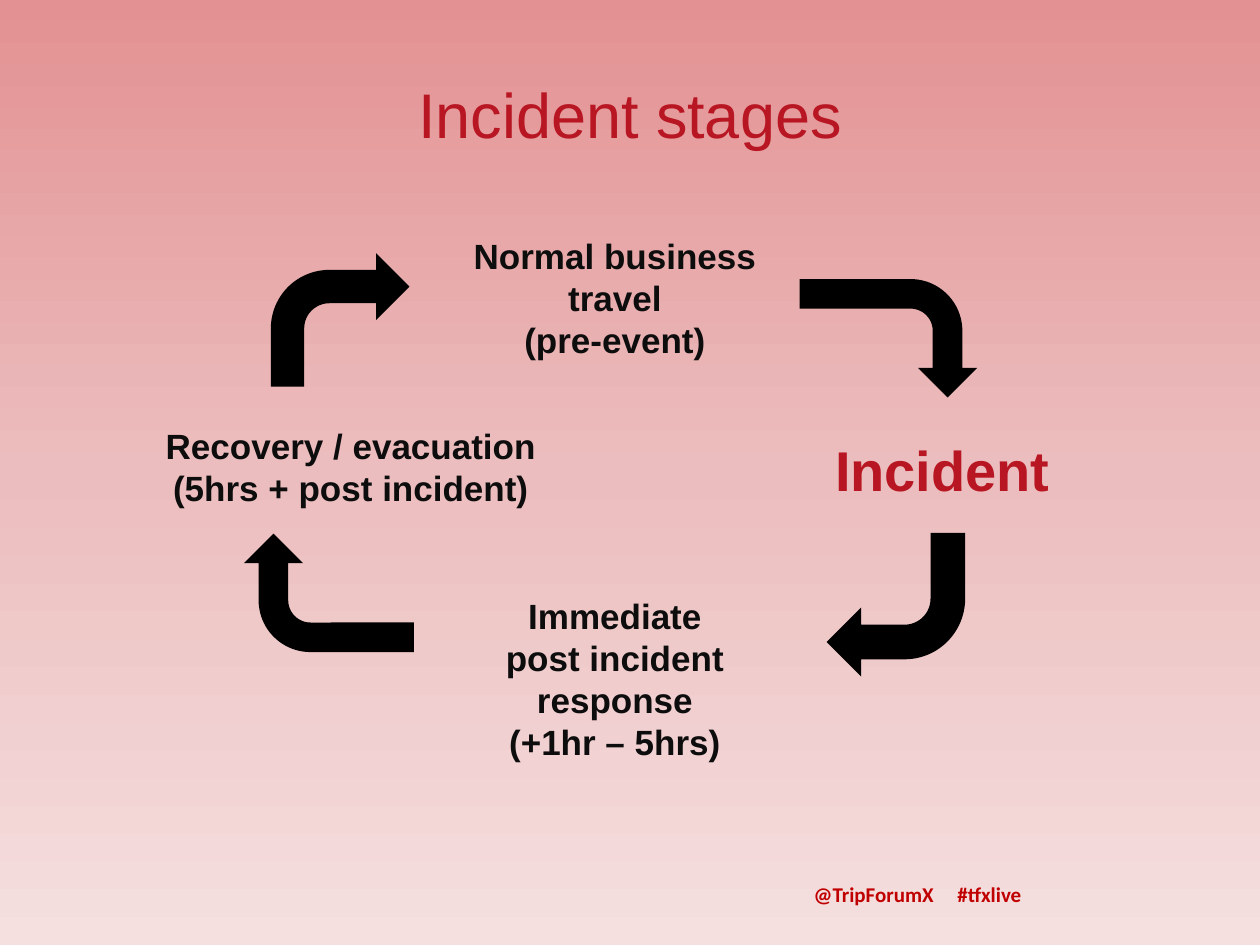
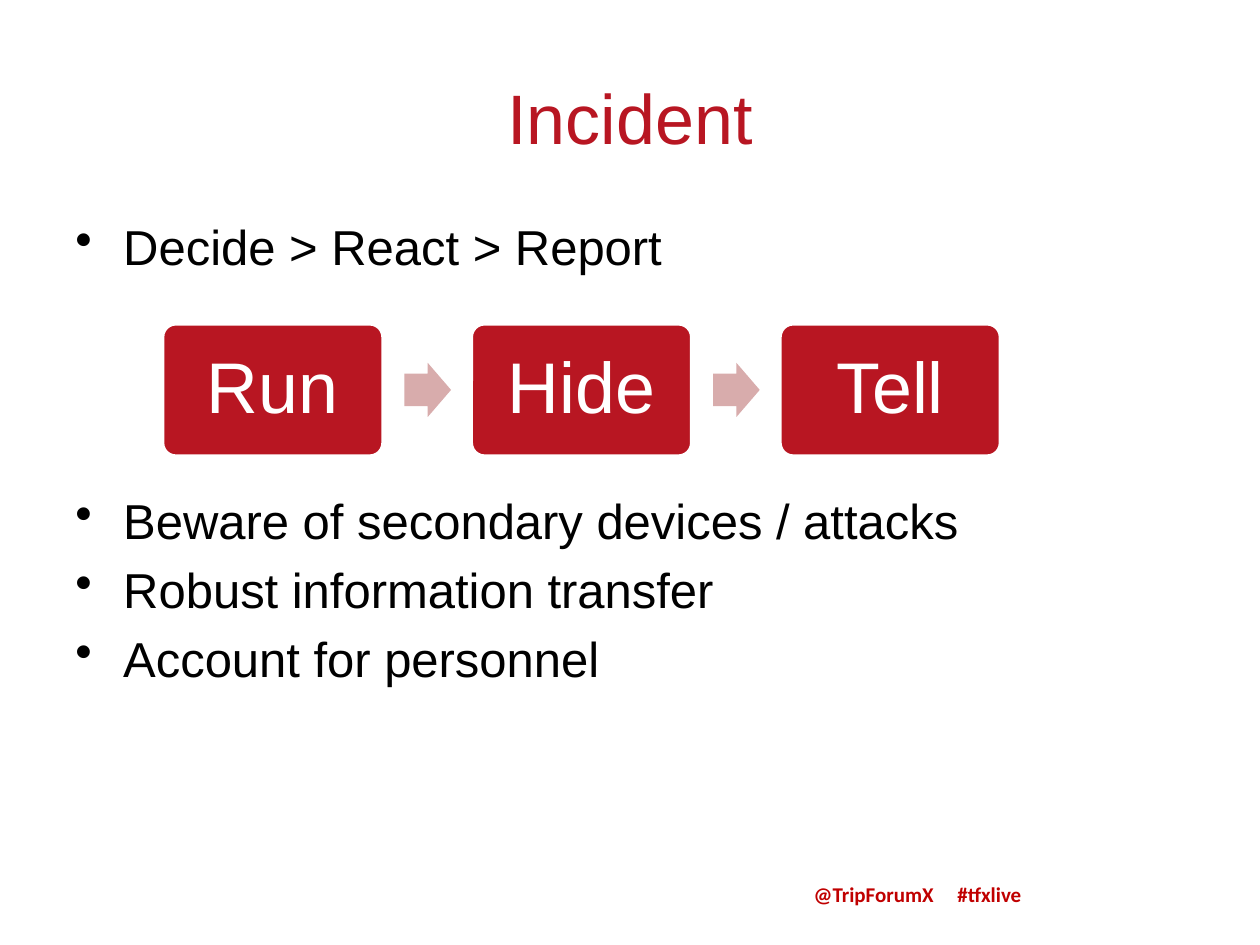
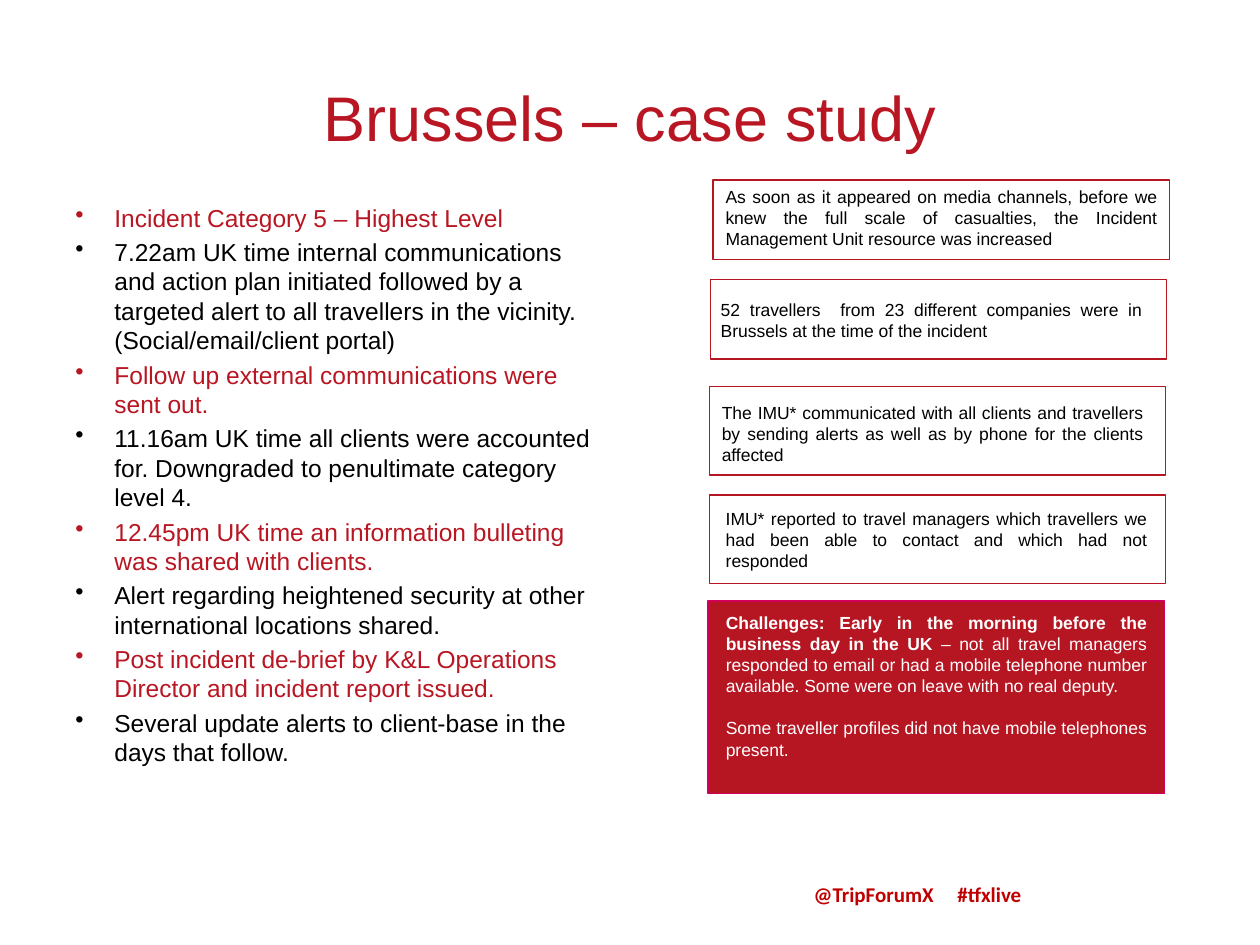
from copy import deepcopy

from lxml.etree import SubElement
from pptx import Presentation
from pptx.dml.color import RGBColor
from pptx.enum.shapes import MSO_SHAPE as Preset
from pptx.enum.text import MSO_ANCHOR as Anchor, PP_ALIGN as Align
from pptx.oxml.ns import qn
from pptx.util import Inches, Pt

RED, CARD_RED, BLACK, WHITE = "B81622", "B51622", "000000", "FFFFFF"
STAGE_TEXT, FOOTER_RED = "0D0D0D", "C00000"
STEP_ARROW, CHALLENGE_LINE = "D8ACAC", "D1005D"

# Shared by all slides
FOOTER = "@TripForumX\t#tfxlive"
FOOTER_TAB = 1.14
TITLE_BOX = (0.5, 0.3, 9, 1.25)

# Incident stages
BACKGROUND_STOPS = [(0, "E39192"), (0.5, "ECBDBE"), (1, "F5DFDF")]
STAGES = [  # box, lines, size, colour
    ((3.64, 1.81, 2.48, 1.11), ["Normal business travel", "(pre-event)"], 20, STAGE_TEXT),
    ((1.12, 3.32, 3.33, 0.77), ["Recovery / evacuation", "(5hrs + post incident)"], 20, STAGE_TEXT),
    ((6.24, 3.41, 2.48, 0.64), ["Incident"], 32, RED),
    ((3.64, 4.67, 2.48, 1.45), ["Immediate", "post incident response", "(+1hr – 5hrs)"], 20, STAGE_TEXT),
]
CYCLE_ARROWS = [  # box, rotation
    ((6.58, 1.98, 0.94, 1.41), 90),
    ((6.56, 4.23, 1.1, 1.14), 180),
    ((2.14, 4.03, 0.94, 1.35), 270),
    ((2.15, 2.01, 1.1, 1.06), 0),
]

# Incident
INCIDENT_POINTS = [
    "Decide > React > Report",
    "Beware of secondary devices / attacks",
    "Robust information transfer",
    "Account for personnel",
]
STEPS = ["Run", "Hide", "Tell"]
STEP_LEFT, STEP_TOP, STEP_PITCH = 1.29, 2.57, 2.45
STEP_WIDTH, STEP_HEIGHT = 1.75, 1.05
ARROW_WIDTH, ARROW_HEIGHT = 0.37, 0.43
STEPS_GAP = 123  # points left free for the steps between two bullets

# Case study
TIMELINE = [
    "Incident Category 5 – Highest Level",
    "7.22am UK time internal communications and action plan initiated followed by a targeted "
    "alert to all travellers in the vicinity. (Social/email/client portal)",
    "Follow up external communications were sent out.",
    "11.16am UK time all clients were accounted for. Downgraded to penultimate category level 4.",
    "12.45pm UK time an information bulleting was shared with clients.",
    "Alert regarding heightened security at other international locations shared.",
    "Post incident de-brief by K&L Operations Director and incident report issued.",
    "Several update alerts to client-base in the days that follow.",
]
CARD_WIDTH = 3.62
CARDS = [  # left, top, height, text inset left and top, text width, text
    (5.66, 1.43, 0.63, 0.1, 0.05, 3.42,
     "As soon as it appeared on media channels, before we knew the full scale of casualties, "
     "the Incident Management Unit resource was increased"),
    (5.64, 2.22, 0.63, 0.08, 0.15, 3.34,
     "52 travellers  from 23 different companies were in Brussels at the time of the incident"),
    (5.63, 3.07, 0.7, 0.1, 0.12, 3.34,
     "The IMU* communicated with all clients and travellers by sending alerts as well as by "
     "phone for the clients affected"),
    (5.63, 3.93, 0.7, 0.13, 0.1, 3.34,
     "IMU* reported to travel managers which travellers we had been able to contact and which "
     "had not responded"),
]
CHALLENGE_CARD = (5.62, 4.77, 1.53, 0.14, 0.09, 3.34)
CHALLENGE_LEAD = "Challenges: Early in the morning before the business day in the UK "
CHALLENGE_TEXT = ("– not all travel managers responded to email or had a mobile telephone number "
                  "available. Some were on leave with no real deputy.")
CHALLENGE_END = "Some traveller profiles did not have mobile telephones present."


def color(value):
    return RGBColor.from_string(value)


def inches(box):
    return [Inches(length) for length in box]


def style(paragraph, size, ink, bold=None, align=None, name="Arial"):
    paragraph.alignment = align
    font = paragraph.font
    font.name, font.size, font.bold = name, Pt(size), bold
    font.color.rgb = color(ink)


def write(frame, lines, *args, **options):
    """Fill a text frame with equally styled paragraphs."""
    frame.word_wrap = True
    frame.text = "\n".join(lines)
    for paragraph in frame.paragraphs:
        style(paragraph, *args, **options)


def add_text(slide, box, lines, *args, anchor=Anchor.TOP, **options):
    frame = slide.shapes.add_textbox(*inches(box)).text_frame
    frame.vertical_anchor = anchor
    write(frame, lines, *args, **options)
    return frame


def add_bullets(slide, box, lines, size, inks, indent):
    frame = add_text(slide, box, lines, size, BLACK)
    for index, paragraph in enumerate(frame.paragraphs):
        properties = paragraph._p.get_or_add_pPr()
        properties.set("marL", str(Inches(indent)))
        properties.set("indent", str(-Inches(indent)))
        bullet = SubElement(properties, qn("a:buChar"))
        bullet.set("char", "•")
        properties.insert(0, bullet)
        if index:
            paragraph.space_before = Pt(size * 0.2)
        paragraph.font.color.rgb = color(inks[index % len(inks)])
    return frame


def add_shape(slide, preset, box, fill=None, line=None, width=0.75):
    shape = slide.shapes.add_shape(preset, *inches(box))
    shape.shadow.inherit = False
    if fill:
        shape.fill.solid()
        shape.fill.fore_color.rgb = color(fill)
    else:
        shape.fill.background()
    if line:
        shape.line.color.rgb = color(line)
        shape.line.width = Pt(width)
    else:
        shape.line.fill.background()
    return shape


def add_slide(presentation, title, size, title_box=TITLE_BOX):
    slide = presentation.slides.add_slide(presentation.slide_layouts[6])
    footer = add_text(slide, (6.36, 6.95, 2.08, 0.3), [FOOTER], 12, FOOTER_RED,
                      bold=True, name="Calibri")
    properties = footer.paragraphs[0]._p.get_or_add_pPr()
    tabs = SubElement(properties, qn("a:tabLst"))
    SubElement(tabs, qn("a:tab"), pos=str(Inches(FOOTER_TAB)), algn="l")
    properties.insert(0, tabs)
    add_text(slide, title_box, [title], size, RED, align=Align.CENTER, anchor=Anchor.MIDDLE)
    return slide


def add_card(slide, left, top, height, inset_left, inset_top, text_width, fill=None, line=CARD_RED):
    card = add_shape(slide, Preset.RECTANGLE, (left, top, CARD_WIDTH, height), fill, line)
    frame = card.text_frame
    frame.vertical_anchor = Anchor.TOP
    frame.margin_left, frame.margin_top = Inches(inset_left), Inches(inset_top)
    frame.margin_right = Inches(CARD_WIDTH - inset_left - text_width)
    return frame


def build_stages(presentation):
    slide = add_slide(presentation, "Incident stages", 36, (0.5, 0.47, 9, 0.85))
    # Background gradient, top to bottom
    fill = slide.background.fill
    fill.gradient()
    fill.gradient_angle = 270
    stop_list = slide._element.find(".//" + qn("a:gsLst"))
    stop_list.append(deepcopy(stop_list[0]))
    for stop, (position, value) in zip(fill.gradient_stops, BACKGROUND_STOPS):
        stop.position = position
        stop.color.rgb = color(value)
    # Cycle
    for box, lines, size, ink in STAGES:
        add_text(slide, box, lines, size, ink, bold=True, align=Align.CENTER)
    for box, rotation in CYCLE_ARROWS:
        add_shape(slide, Preset.BENT_ARROW, box, BLACK).rotation = rotation


def build_incident(presentation):
    slide = add_slide(presentation, "Incident", 40)
    body = add_bullets(slide, (0.5, 1.67, 9, 4.95), INCIDENT_POINTS, 28, [BLACK], 0.38)
    body.paragraphs[1].space_before = Pt(STEPS_GAP)
    # Steps with an arrow after each but the last
    for index, step in enumerate(STEPS):
        left = STEP_LEFT + index * STEP_PITCH
        box = add_shape(slide, Preset.ROUNDED_RECTANGLE,
                        (left, STEP_TOP, STEP_WIDTH, STEP_HEIGHT), RED, WHITE, 2)
        box.adjustments[0] = 0.1
        write(box.text_frame, [step], 41, WHITE, align=Align.CENTER)
        box.text_frame.paragraphs[0].line_spacing = 0.9
        if index < len(STEPS) - 1:
            arrow_left = left + STEP_WIDTH + 0.17
            arrow_top = STEP_TOP + (STEP_HEIGHT - ARROW_HEIGHT) / 2
            arrow = add_shape(slide, Preset.RIGHT_ARROW,
                              (arrow_left, arrow_top, ARROW_WIDTH, ARROW_HEIGHT), STEP_ARROW)
            arrow.adjustments[0] = 0.6


def build_case_study(presentation):
    slide = add_slide(presentation, "Brussels – case study", 36)
    add_bullets(slide, (0.5, 1.56, 4.44, 4.95), TIMELINE, 14, [RED, BLACK], 0.31)
    # Cards on the right
    for *layout, text in CARDS:
        write(add_card(slide, *layout), [text], 10, BLACK, align=Align.JUSTIFY)
    # Challenges
    frame = add_card(slide, *CHALLENGE_CARD, CARD_RED, CHALLENGE_LINE)
    write(frame, ["", CHALLENGE_END], 10, WHITE, align=Align.JUSTIFY)
    opening, closing = frame.paragraphs
    for text, bold in [(CHALLENGE_LEAD, True), (CHALLENGE_TEXT, False)]:
        run = opening.add_run()
        run.text = text
        run.font.bold = bold
    closing.space_before = Pt(12)


def main():
    presentation = Presentation()
    presentation.slide_width, presentation.slide_height = Inches(10), Inches(7.5)
    build_stages(presentation)
    build_incident(presentation)
    build_case_study(presentation)
    presentation.save("out.pptx")


if __name__ == "__main__":
    main()
